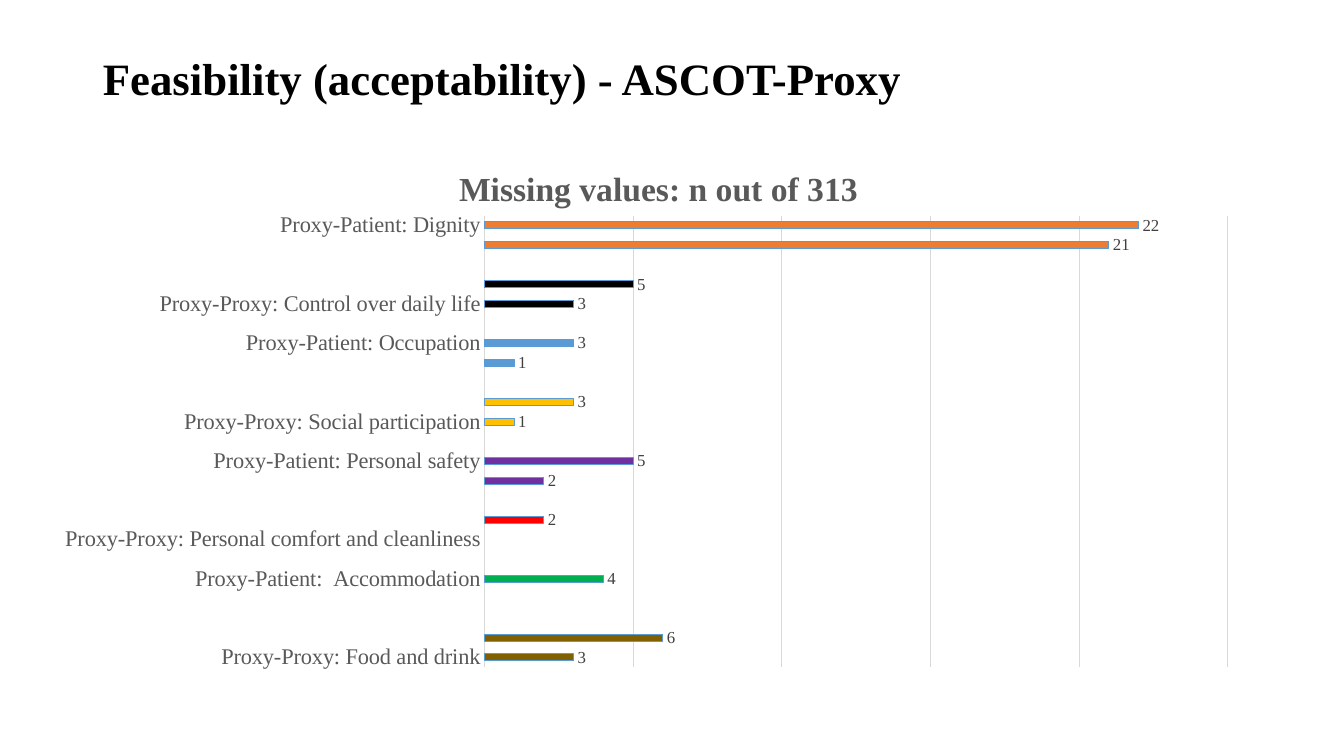
from lxml import etree
from pptx import Presentation
from pptx.chart.data import CategoryChartData
from pptx.dml.color import RGBColor
from pptx.enum.chart import XL_CHART_TYPE, XL_LABEL_POSITION, XL_TICK_MARK
from pptx.enum.text import MSO_ANCHOR, PP_ALIGN
from pptx.oxml.ns import qn
from pptx.util import Inches, Pt

BLACK = RGBColor(0x00, 0x00, 0x00)
DARK_GRAY = RGBColor(0x40, 0x40, 0x40)
GRAY = RGBColor(0x59, 0x59, 0x59)
LIGHT_GRAY = RGBColor(0xD9, 0xD9, 0xD9)
BLUE = RGBColor(0x5B, 0x9B, 0xD5)
BROWN = RGBColor(0x80, 0x60, 0x00)
GREEN = RGBColor(0x00, 0xB0, 0x50)
RED = RGBColor(0xFF, 0x00, 0x00)
PURPLE = RGBColor(0x70, 0x30, 0xA0)
YELLOW = RGBColor(0xFF, 0xC0, 0x00)
ORANGE = RGBColor(0xED, 0x7D, 0x31)
SERIF = "Times New Roman"

# Domain, missing values for proxy-proxy and proxy-patient, colour
DOMAINS = [
    ("Food and drink", 3, 6, BROWN),
    ("Accommodation", None, 4, GREEN),
    ("Personal comfort and cleanliness", None, 2, RED),
    ("Personal safety", 2, 5, PURPLE),
    ("Social participation", 1, 3, YELLOW),
    ("Occupation", 1, 3, BLUE),
    ("Control over daily life", 3, 5, BLACK),
    ("Dignity", 21, 22, ORANGE),
]


def write_text(text_frame, text, size, color, spacing=None, align=None):
    text_frame.text = text
    paragraph = text_frame.paragraphs[0]
    paragraph.line_spacing = spacing
    paragraph.alignment = align
    font = paragraph.runs[0].font
    font.name, font.size, font.bold = SERIF, Pt(size), True
    font.color.rgb = color


def set_layout(parent, index, **settings):
    """Place a chart part by fractions of the chart area."""
    for old_layout in parent.findall(qn("c:layout")):
        parent.remove(old_layout)
    layout = etree.Element(qn("c:layout"))
    manual = etree.SubElement(layout, qn("c:manualLayout"))
    for name, value in settings.items():
        etree.SubElement(manual, qn(f"c:{name}")).set("val", str(value))
    parent.insert(index, layout)


presentation = Presentation()
presentation.slide_width = Inches(13.33)
presentation.slide_height = Inches(7.5)
slide = presentation.slides.add_slide(presentation.slide_layouts[5])

# Slide title
title = slide.shapes.title
title.left, title.top = Inches(0.92), Inches(0.4)
title.width, title.height = Inches(11.5), Inches(0.8)
title.text_frame.vertical_anchor = MSO_ANCHOR.MIDDLE
write_text(title.text_frame, "Feasibility (acceptability) - ASCOT-Proxy",
           size=32, color=BLACK, spacing=0.9, align=PP_ALIGN.LEFT)

# Chart data: two bars per domain, one empty row between domains
categories, values, colors = [], [], []
for domain, proxy_value, patient_value, color in DOMAINS:
    if categories:
        categories.append("")
        values.append(None)
        colors.append(None)
    gap = "  " if domain == "Accommodation" else " "
    categories += [f"Proxy-Proxy: {domain}", f"Proxy-Patient:{gap}{domain}"]
    values += [proxy_value, patient_value]
    colors += [color, color]
chart_data = CategoryChartData()
chart_data.categories = categories
chart_data.add_series("Series 1", values)

# Bar chart
chart = slide.shapes.add_chart(
    XL_CHART_TYPE.BAR_CLUSTERED, Inches(0.41), Inches(1.38),
    Inches(12.01), Inches(5.38), chart_data).chart
chart.has_legend = False
chart.font.name, chart.font.size = "Calibri", Pt(10)
chart.font.color.rgb = BLACK
write_text(chart.chart_title.text_frame, "Missing values: n out of 313",
           size=24, color=GRAY)
chart.chart_title.include_in_layout = False
chart_space = chart.element
set_layout(chart_space.find(".//" + qn("c:title")), 1,
           xMode="edge", yMode="edge", x=0.34, y=0.04)
set_layout(chart_space.find(".//" + qn("c:plotArea")), 0,
           layoutTarget="inner", xMode="edge", yMode="edge",
           x=0.366, y=0.141, w=0.614, h=0.833)

# Axes
category_axis = chart.category_axis
category_axis.major_tick_mark = XL_TICK_MARK.NONE
category_axis.format.line.color.rgb = LIGHT_GRAY
category_axis.format.line.width = Pt(0.75)
value_axis = chart.value_axis
value_axis.visible = False
value_axis.minimum_scale, value_axis.maximum_scale = 0, 25
value_axis.major_unit = 5
value_axis.major_gridlines.format.line.color.rgb = LIGHT_GRAY
value_axis.major_gridlines.format.line.width = Pt(0.75)

# Bars
plot = chart.plots[0]
plot.gap_width = 182
plot.vary_by_categories = False
series = plot.series[0]
series.invert_if_negative = False
series.format.fill.solid()
series.format.fill.fore_color.rgb = BLUE
series.format.line.color.rgb = BLUE
series.format.line.width = Pt(0.75)
for index, (value, color) in enumerate(zip(values, colors)):
    if value is not None:
        bar_format = series.points[index].format
        bar_format.fill.solid()
        bar_format.fill.fore_color.rgb = color
        bar_format.line.color.rgb = BLUE
        bar_format.line.width = Pt(0.75)

# Value labels and category labels
labels = series.data_labels
labels.show_value = True
labels.position = XL_LABEL_POSITION.OUTSIDE_END
for font, size, color in ((labels.font, 12, DARK_GRAY),
                          (category_axis.tick_labels.font, 16, GRAY)):
    font.name, font.size = SERIF, Pt(size)
    font.color.rgb = color

presentation.save("out.pptx")
